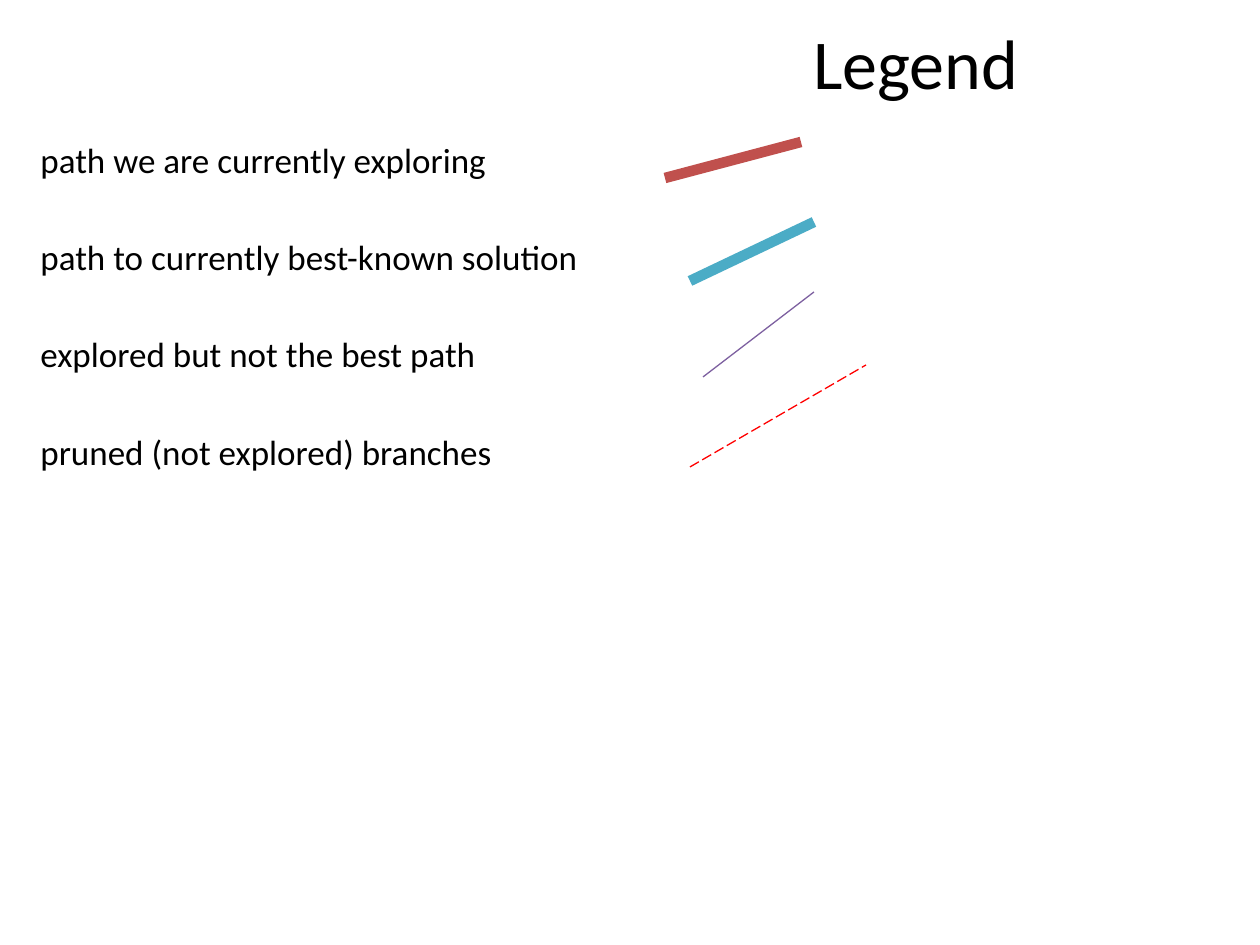
from pptx import Presentation
from pptx.dml.color import RGBColor
from pptx.enum.dml import MSO_LINE
from pptx.enum.shapes import MSO_CONNECTOR
from pptx.oxml.ns import qn
from pptx.util import Pt
from lxml import etree

STRAIGHT = MSO_CONNECTOR.STRAIGHT
LONG_DASH = MSO_LINE.LONG_DASH

EMU_PER_PX = 914400 // 126
BLANK_LAYOUT = 6
COLORS = {
    "text": "000000",
    "current": "C0504D",
    "best": "4BACC6",
    "explored": "7D60A0",
    "pruned": "FF0000",
}


def px(length):
    return length * EMU_PER_PX


class LegendSlide:
    font = "Calibri"

    def __init__(self, prs):
        self.slide = prs.slides.add_slide(prs.slide_layouts[BLANK_LAYOUT])

    def text(self, box, lines, size, gap=0, wrap=True):
        frame = self.slide.shapes.add_textbox(*map(px, box)).text_frame
        frame.word_wrap = wrap
        for i, line in enumerate(lines):
            paragraph = frame.add_paragraph() if i else frame.paragraphs[0]
            if i:
                paragraph.space_before = Pt(gap)
            run = paragraph.add_run()
            run.text = line
            run.font.name = self.font
            run.font.size = Pt(size)
            run.font.color.rgb = RGBColor.from_string(COLORS["text"])

    def line(self, ends, color, width, dash=None):
        connector = self.slide.shapes.add_connector(STRAIGHT, *map(px, ends))
        connector.line.color.rgb = RGBColor.from_string(COLORS[color])
        connector.line.width = Pt(width)
        if dash:
            connector.line.dash_style = dash
        etree.SubElement(connector._element.spPr, qn("a:effectLst"))


def main():
    prs = Presentation()
    prs.slide_width, prs.slide_height = px(1260), px(945)
    legend = LegendSlide(prs)

    # Descriptions of the path kinds
    descriptions = [
        "path we are currently exploring",
        "path to currently best-known solution",
        "explored but not the best path",
        "pruned (not explored) branches",
    ]
    legend.text((28, 132, 1192, 724), descriptions, 20, gap=31.6)

    # Sample line for each path kind
    legend.line((801, 142, 665, 178), "current", 6)
    legend.line((814, 222, 690, 281), "best", 6)
    legend.line((814, 292, 703, 377), "explored", 0.75)
    legend.line((690, 467, 866, 365), "pruned", 0.75, LONG_DASH)

    # Heading
    legend.text((801, 13, 233, 97), ["Legend"], 40, wrap=False)

    prs.save("out.pptx")


if __name__ == "__main__":
    main()
